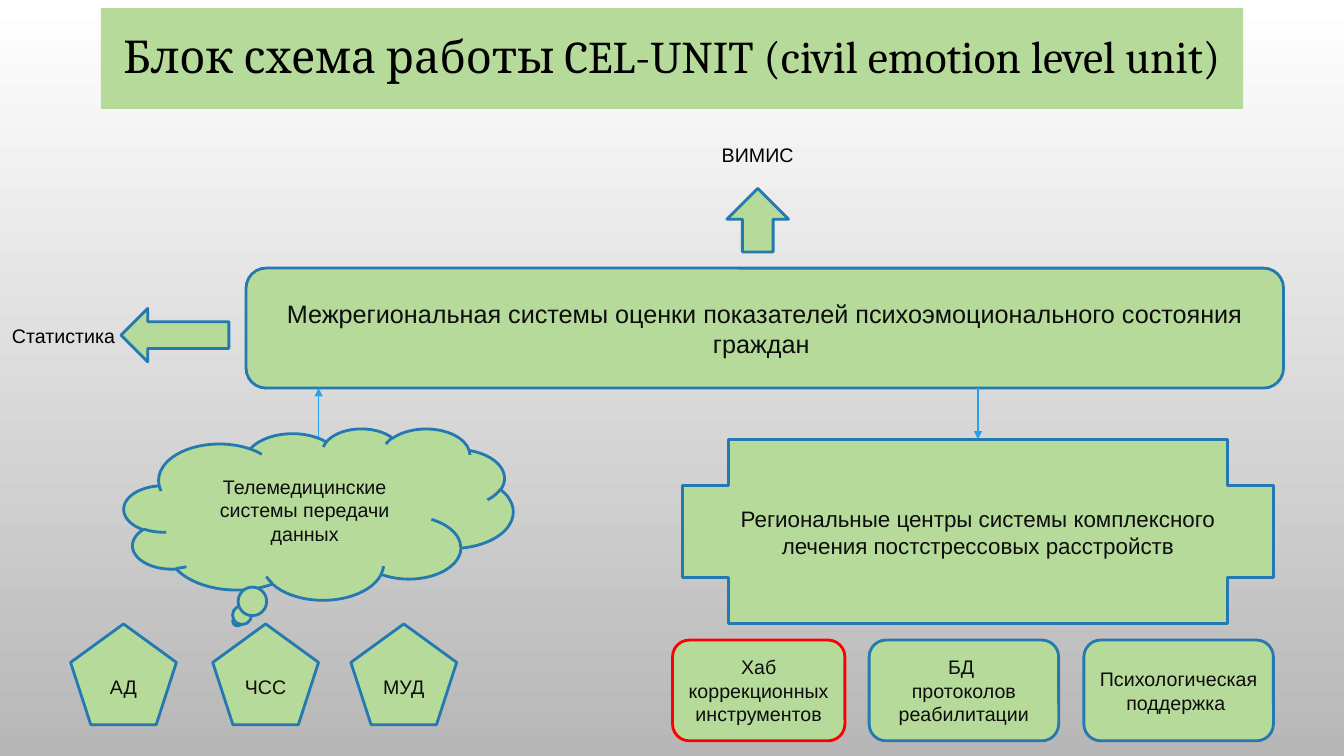
from dataclasses import dataclass

from lxml.etree import SubElement
from pptx import Presentation
from pptx.dml.color import RGBColor
from pptx.enum.shapes import MSO_CONNECTOR, MSO_SHAPE
from pptx.enum.text import MSO_ANCHOR, MSO_AUTO_SIZE, PP_ALIGN
from pptx.oxml.ns import qn
from pptx.util import Inches, Pt


@dataclass(frozen=True)
class Theme:
    """Colours, fonts and sizes of the slide."""
    fill: str = "B6DA9A"
    outline: str = "2379B0"
    accent: str = "FF0000"
    arrow: str = "29A0ED"
    ink: str = "0D0D0D"
    black: str = "000000"
    bg_top: str = "FFFFFF"
    bg_bottom: str = "B7B7B7"
    body_font: str = "Arial"
    title_font: str = "Cambria"
    title: float = 32.4
    large: float = 18
    medium: float = 16
    small: float = 14
    outline_width: float = 2
    arrow_width: float = 0.75


THEME = Theme()


def rgb(value):
    """Turn a hex string into a colour."""
    return RGBColor.from_string(value)


def write(sp, text, size=THEME.small, color=THEME.ink, font=THEME.body_font,
          align=PP_ALIGN.CENTER, anchor=MSO_ANCHOR.MIDDLE, wrap=True, spacing=None):
    """Fill a shape with formatted text, one paragraph per line."""
    tf = sp.text_frame
    tf.word_wrap = wrap
    tf.vertical_anchor = anchor
    for i, line in enumerate(text.split("\n")):
        p = tf.paragraphs[0] if i == 0 else tf.add_paragraph()
        p.alignment = align
        if spacing:
            p.line_spacing = spacing
        r = p.add_run()
        r.text = line
        r.font.size = Pt(size)
        r.font.name = font
        r.font.color.rgb = rgb(color)


def block(s, kind, box, text="", outline=THEME.outline, **fmt):
    """Add a filled preset shape with optional outline and text."""
    sp = s.shapes.add_shape(kind, *map(Inches, box))
    sp.shadow.inherit = False
    sp.fill.solid()
    sp.fill.fore_color.rgb = rgb(THEME.fill)
    if outline:
        sp.line.color.rgb = rgb(outline)
        sp.line.width = Pt(THEME.outline_width)
    else:
        sp.line.fill.background()
    if text:
        write(sp, text, **fmt)
    return sp


def label(s, box, text):
    """Add a plain one-line caption."""
    sp = s.shapes.add_textbox(*map(Inches, box))
    write(sp, text, color=THEME.black, align=PP_ALIGN.LEFT,
          anchor=MSO_ANCHOR.TOP, wrap=False)
    sp.text_frame.auto_size = MSO_AUTO_SIZE.SHAPE_TO_FIT_TEXT


def flow_arrow(s, x, start, end):
    """Add a thin vertical arrow from start to end."""
    cxn = s.shapes.add_connector(MSO_CONNECTOR.STRAIGHT, Inches(x), Inches(start),
                                 Inches(x), Inches(end))
    cxn.line.color.rgb = rgb(THEME.arrow)
    cxn.line.width = Pt(THEME.arrow_width)
    SubElement(cxn.line._get_or_add_ln(), qn("a:tailEnd"), type="triangle")
    SubElement(cxn._element.spPr, qn("a:effectLst"))


def background(s):
    """Paint the vertical background gradient."""
    fill = s.background.fill
    fill.gradient()
    fill.gradient_angle = 270
    for stop, position, color in zip(fill.gradient_stops, (0, 1),
                                     (THEME.bg_top, THEME.bg_bottom)):
        stop.position = position
        stop.color.rgb = rgb(color)


def title_band(s, box):
    """Place the title on its band."""
    block(s, MSO_SHAPE.RECTANGLE, box,
          "Блок схема работы CEL-UNIT (civil emotion level unit)", outline=None,
          size=THEME.title, color=THEME.black, font=THEME.title_font, spacing=0.9)


def core_system(s, box):
    """Place the central system with its two outputs."""
    x, y, w, h = box
    block(s, MSO_SHAPE.ROUNDED_RECTANGLE, box,
          "Межрегиональная системы оценки показателей "
          "психоэмоционального состояния граждан ", size=THEME.large)
    block(s, MSO_SHAPE.LEFT_ARROW, (x - 1.24, y + 0.4, 1.07, 0.53))
    up = block(s, MSO_SHAPE.LEFT_ARROW, (x + 4.76, y - 0.78, 0.63, 0.61))
    up.rotation = 90
    label(s, (x - 2.42, y + 0.5, 1.23, 0.34), "Статистика")
    label(s, (x + 4.62, y - 1.29, 0.92, 0.34), "ВИМИС")


def telemedicine(s, box):
    """Place the data cloud, its sensors and the arrow up to the core."""
    x, y, w, h = box
    block(s, MSO_SHAPE.CLOUD_CALLOUT, (x, y, w, h),
          "Телемедицинские системы передачи данных")
    for dx, name in ((-0.53, "АД"), (0.88, "ЧСС"), (2.25, "МУД ")):
        block(s, MSO_SHAPE.REGULAR_PENTAGON, (x + dx, y + 1.94, 1.05, 1), name)
    flow_arrow(s, x + w / 2, y + 0.09, y - 0.4)


def regional_centres(s, box):
    """Place the regional centres, their services and the arrow from the core."""
    x, y, w, h = box
    block(s, MSO_SHAPE.CROSS, box,
          "Региональные центры системы комплексного\n"
          "лечения постстрессовых расстройств", size=THEME.medium)
    services = (
        (-0.1, 1.71, "Хаб коррекционных инструментов", THEME.accent),
        (1.85, 1.88, "БД \nпротоколов реабилитации", THEME.outline),
        (3.98, 1.88, "Психологическая поддержка ", THEME.outline),
    )
    for dx, width, name, outline in services:
        block(s, MSO_SHAPE.ROUNDED_RECTANGLE, (x + dx, y + h + 0.16, width, 1),
              name, outline=outline)
    flow_arrow(s, x + w / 2, y - 0.51, y)


def main():
    """Build and save the slide."""
    prs = Presentation()
    prs.slide_width, prs.slide_height = Inches(13.33), Inches(7.5)
    s = prs.slides.add_slide(prs.slide_layouts[6])
    background(s)
    title_band(s, (1, 0.08, 11.33, 1))
    core_system(s, (2.44, 2.66, 10.29, 1.19))
    telemedicine(s, (1.23, 4.25, 3.86, 1.7))
    regional_centres(s, (6.77, 4.36, 5.86, 1.83))
    prs.save("out.pptx")


if __name__ == "__main__":
    main()
